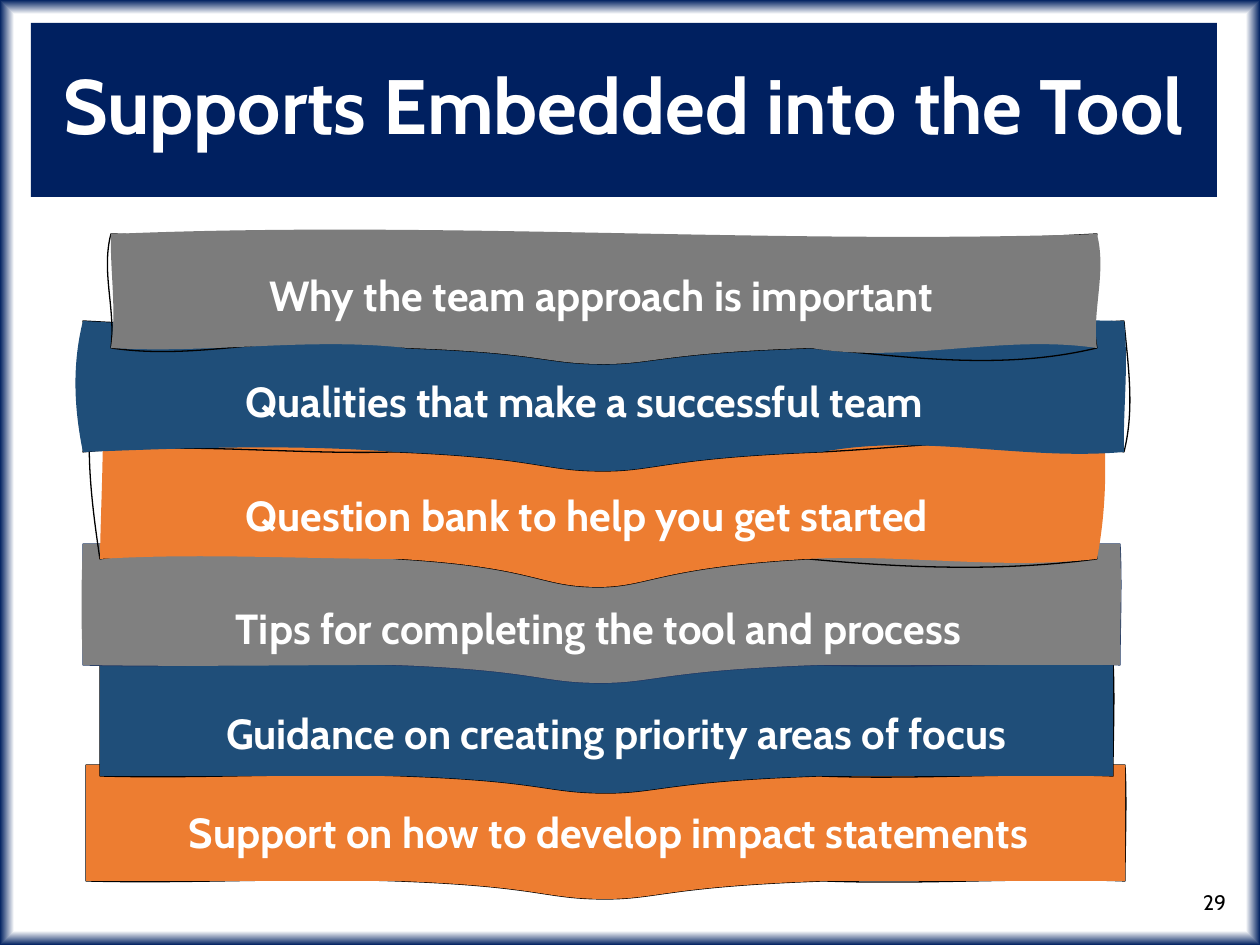
from pptx import Presentation
from pptx.dml.color import RGBColor
from pptx.enum.shapes import MSO_SHAPE
from pptx.enum.text import MSO_ANCHOR, PP_ALIGN
from pptx.oxml import parse_xml
from pptx.oxml.ns import nsdecls, qn
from pptx.util import Pt

SCALE = 914400 // 126
NAVY, BLUE, ORANGE, WHITE, BLACK = "002060", "1F4E79", "ED7D31", "FFFFFF", "000000"
GREY, DARK_GREY = "808080", "7C7C7C"
FLAT = (0, 0, 0, 0, 0, 0, 0, 0, 0, 0)
WAVY = (0, 0, 0, 0, 3, -4, 4, -4, 0, 2)

BANNERS = [
    dict(box=(86, 765, 1039, 116), tip=18, fill=ORANGE, ink=BLACK,
         fill_bends=FLAT, ink_bends=WAVY, label_box=(176, 785, 1084, 93),
         label="Support on how to develop impact statements"),
    dict(box=(100, 660, 1013, 116), tip=17, fill=BLUE, ink=BLACK,
         fill_bends=FLAT, ink_bends=WAVY, label_box=(213, 688, 993, 82), spacing=1.15,
         label="Guidance on creating priority areas of focus"),
    dict(box=(83, 544, 1037, 121), tip=18, fill=GREY, ink="203864",
         fill_bends=(0, 0, -2, -2, 2, 0, 0, 0, 0, 2), ink_bends=WAVY,
         label_box=(223, 605, 881, 45),
         label="Tips for completing the tool and process"),
    dict(box=(100, 359, 997, 200), tip=28, fill=ORANGE, ink=BLACK,
         fill_bends=(16, 14, 6, 1, -6, 0, -5, 11, 13, 9),
         ink_bends=(14, 3, -18, -10, -16, -10, 9, 13, -8, 10),
         label_box=(233, 473, 794, 83),
         label="Question bank to help you get started"),
    dict(box=(83, 321, 1041, 131), tip=19, fill=BLUE, ink=BLACK,
         fill_bends=(-8, 20, -11, -9, -4, -8, -19, 9, -1, 5),
         ink_bends=(19, 19, 6, 8, -10, 3, -5, -21, 11, 4),
         label_box=(233, 378, 819, 45), label_fill=BLUE,
         label="Qualities that make a successful team"),
    dict(box=(111, 234, 986, 114), tip=16, fill=DARK_GREY, ink=BLACK,
         fill_bends=(11, -14, -1, 6, 6, -11, 16, -14, -5, 10),
         ink_bends=(18, 10, -10, 5, 15, -23, 9, 23, -6, -8),
         label_box=(256, 248, 814, 93), label_fill=DARK_GREY,
         label="Why the team approach is important"),
]


def emu(px):
    """Turn px into EMU."""
    return round(px * SCALE)


def color(value):
    """Turn a hex string into a colour."""
    return RGBColor.from_string(value)


def apply(target, values):
    """Set every attribute named in a dict of format values."""
    for name, value in values.items():
        setattr(target, name, value)


def paint(shape, fill=None, ink=None):
    """Give a shape a plain fill and line without a shadow."""
    shape.shadow.inherit = False
    if fill:
        shape.fill.solid()
        shape.fill.fore_color.rgb = color(fill)
    else:
        shape.fill.background()
    if ink:
        shape.line.color.rgb = color(ink)
        shape.line.width = Pt(0.75)
    else:
        shape.line.fill.background()


def add_label(page, box, text, size, ink=WHITE, bold=True, fill=None,
              align=PP_ALIGN.LEFT, spacing=1.0, inset=13):
    """Place one line of text in a text box, or in a rectangle if filled."""
    place = [emu(px) for px in box]
    if fill:
        shape = page.shapes.add_shape(MSO_SHAPE.RECTANGLE, *place)
        paint(shape, fill)
    else:
        shape = page.shapes.add_textbox(*place)
    frame = shape.text_frame
    apply(frame, dict(word_wrap=True, vertical_anchor=MSO_ANCHOR.MIDDLE,
                      margin_left=emu(inset), margin_right=emu(inset),
                      margin_top=emu(6), margin_bottom=emu(6)))
    para = frame.paragraphs[0]
    apply(para, dict(alignment=align, line_spacing=spacing))
    span = para.add_run()
    span.text = text
    apply(span.font, dict(size=Pt(size), name="Cabin", bold=bold))
    span.font.color.rgb = color(ink)


def bent_edge(start, end, bends, axis):
    """Return two control points, pushed along one axis, and the end."""
    controls = []
    for part, bend in zip((1 / 3, 2 / 3), bends):
        knot = [a + (b - a) * part for a, b in zip(start, end)]
        knot[axis] += bend
        controls.append(knot)
    return [*controls, end]


def banner_knots(box, tip, bends):
    """Return cubic knots; bends run top, left, bottom left, bottom right, right."""
    left, top, width, height = box
    right, bottom = left + width, top + height

    def low(part, drop=0):
        """Return a point on or below the bottom edge."""
        return left + width * part, bottom + tip * drop

    corner = (right, top)
    return [
        corner,
        *bent_edge(corner, (left, top), bends[0:2], 1),
        *bent_edge((left, top), low(0), bends[2:4], 0),
        *bent_edge(low(0), low(0.3), bends[4:6], 1),
        low(0.44, 0.3), low(0.44, 1), low(0.5, 1),
        low(0.55, 1), low(0.56, 0.3), low(0.71),
        *bent_edge(low(0.71), low(1), bends[6:8], 1),
        *bent_edge(low(1), corner, bends[8:10], 0),
    ]


def add_curved_shape(page, knots):
    """Build a freeform and join each three of its lines into one cubic curve."""
    points = [(emu(x), emu(y)) for x, y in knots]
    builder = page.shapes.build_freeform(*points[0], scale=1.0)
    builder.add_line_segments(points[1:], close=True)
    shape = builder.convert_to_shape()
    lines = list(shape.element.iter(qn("a:lnTo")))
    for first, second, third in zip(lines[0::3], lines[1::3], lines[2::3]):
        first.tag = qn("a:cubicBezTo")
        for line in (second, third):
            first.append(line[0])
            line.getparent().remove(line)
    return shape


def add_banner(page, box, tip, fill, ink, fill_bends, ink_bends,
               label_box, label, label_fill=None, spacing=1.0):
    """Draw a loose ink outline, the filled banner over it, and its label."""
    for bends, style in ((ink_bends, dict(ink=ink)), (fill_bends, dict(fill=fill))):
        paint(add_curved_shape(page, banner_knots(box, tip, bends)), **style)
    add_label(page, label_box, label, 24, fill=label_fill, spacing=spacing)


def set_background(page):
    """Fill the page with white that turns navy at its edges."""
    fill = page.background.fill
    fill.gradient()
    for stop, position, value in zip(fill.gradient_stops, (0.97, 1), (WHITE, NAVY)):
        stop.position = position
        stop.color.rgb = color(value)
    gradient = page.element.find(".//" + qn("a:gradFill"))
    gradient.replace(gradient.find(qn("a:lin")), parse_xml(
        f'<a:path {nsdecls("a")} path="shape">'
        '<a:fillToRect l="50000" t="50000" r="50000" b="50000"/></a:path>'))


def main():
    """Build the deck and save it."""
    deck = Presentation()
    apply(deck, dict(slide_width=emu(1260), slide_height=emu(945)))
    page = deck.slides.add_slide(deck.slide_layouts[6])
    set_background(page)
    add_label(page, (955, 877, 284, 50), "29", 12, ink=BLACK, bold=False,
              align=PP_ALIGN.RIGHT)
    for banner in BANNERS:
        add_banner(page, **banner)
    add_label(page, (31, 23, 1186, 174), "Supports Embedded into the Tool", 44,
              fill=NAVY, align=PP_ALIGN.CENTER, spacing=0.9)
    deck.save("out.pptx")


if __name__ == "__main__":
    main()
